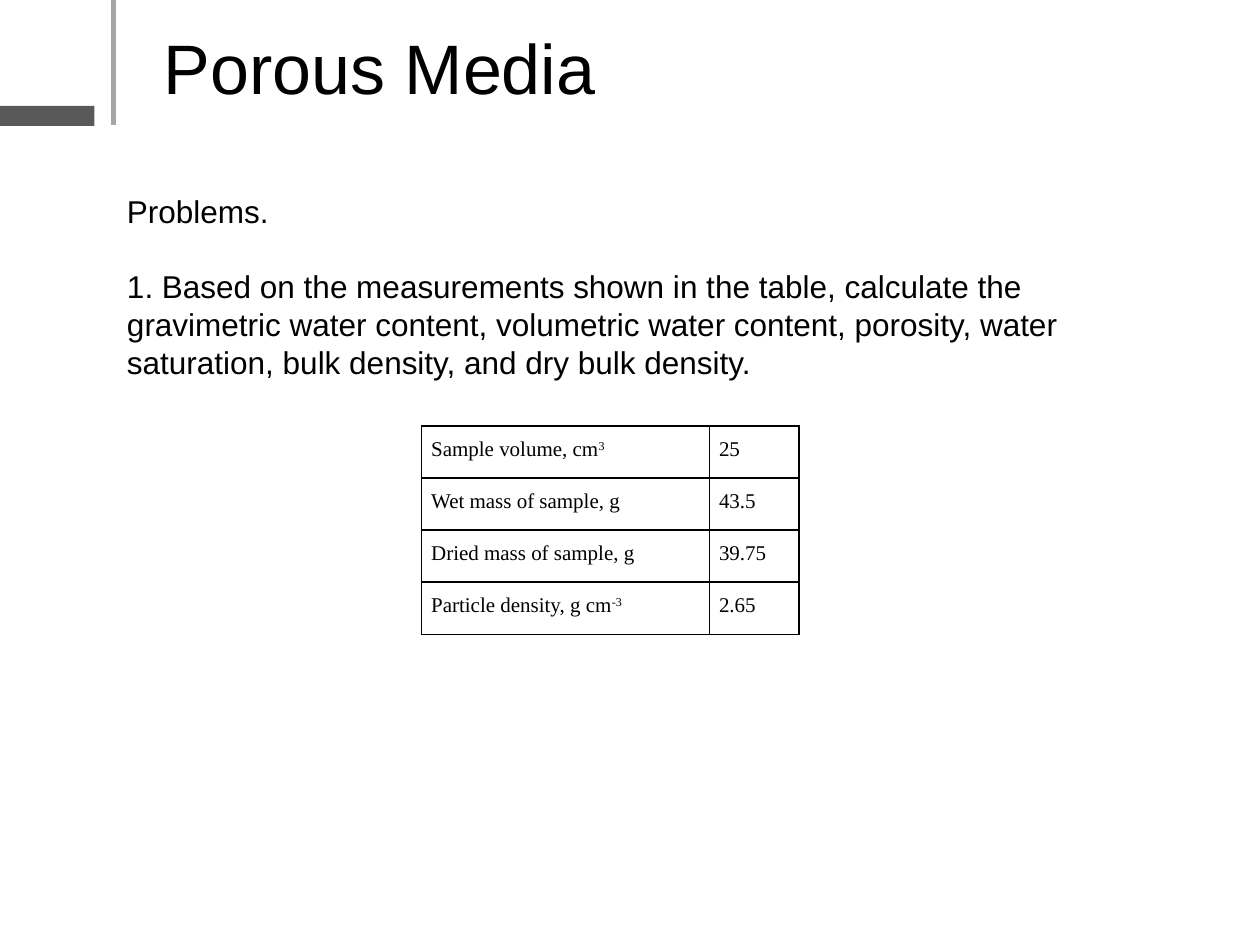
from lxml import etree
from pptx import Presentation
from pptx.dml.color import RGBColor
from pptx.enum import shapes, text
from pptx.oxml import parse_xml
from pptx.oxml.ns import nsdecls, qn
from pptx.util import Pt


def color(hex_value):
    return RGBColor.from_string(hex_value)


def add_run(paragraph, words, size, font, baseline=None):
    run = paragraph.add_run()
    run.text = words
    run.font.size = Pt(size)
    run.font.name = font
    run.font.color.rgb = color("000000")
    if baseline:
        run.font._element.set("baseline", str(baseline))


prs = Presentation()
prs.slide_width, prs.slide_height = Pt(720), Pt(540)
slide = prs.slides.add_slide(prs.slide_layouts[5])

# Corner decoration
corner_bar = slide.shapes.add_shape(
    shapes.MSO_SHAPE.RECTANGLE, Pt(0), Pt(60.5), Pt(54), Pt(11.5))
corner_bar.shadow.inherit = False
corner_bar.fill.solid()
corner_bar.fill.fore_color.rgb = color("595959")
corner_bar.line.fill.background()

corner_rule = slide.shapes.add_connector(
    shapes.MSO_CONNECTOR.STRAIGHT, Pt(65), Pt(0), Pt(65), Pt(71.5))
corner_rule.line.color.rgb = color("A6A6A6")
corner_rule.line.width = Pt(3)
etree.SubElement(corner_rule._element.spPr, qn("a:effectLst"))

# Title
heading = slide.shapes.title
heading.left, heading.top, heading.width, heading.height = (
    Pt(86.4), Pt(10.5), Pt(275), Pt(55.5))
heading.text_frame.auto_size = text.MSO_AUTO_SIZE.NONE
heading.text_frame.vertical_anchor = text.MSO_ANCHOR.TOP
heading_line = heading.text_frame.paragraphs[0]
heading_line.alignment = text.PP_ALIGN.LEFT
heading_line.line_spacing = Pt(48)
add_run(heading_line, "Porous Media", 40, "Arial")

# Problem statement
problem = slide.shapes.add_textbox(Pt(65.5), Pt(106), Pt(584), Pt(138)).text_frame
problem.word_wrap = True
intro = problem.paragraphs[0]
question = problem.add_paragraph()
question.space_before = Pt(21.6)
statements = [
    (intro, "Problems."),
    (question, "1. Based on the measurements shown in the table, calculate the "
               "gravimetric water content, volumetric water content, porosity, "
               "water saturation, bulk density, and dry bulk density."),
]
for paragraph, words in statements:
    paragraph.line_spacing = Pt(21.6)
    add_run(paragraph, words, 18, "Arial")

# Measurements: quantity, exponent of its unit, value
measurements = [
    ("Sample volume, cm", "3", "25"),
    ("Wet mass of sample, g", "", "43.5"),
    ("Dried mass of sample, g", "", "39.75"),
    ("Particle density, g cm", "-3", "2.65"),
]
row_height = 29.75
table = slide.shapes.add_table(
    len(measurements), 2, Pt(241), Pt(243.5), Pt(215.5),
    Pt(row_height * len(measurements))).table
table.first_row = table.horz_banding = False
table.columns[0].width, table.columns[1].width = Pt(164.5), Pt(51)

for row, (quantity, exponent, value) in enumerate(measurements):
    table.rows[row].height = Pt(row_height)
    for column, words in enumerate((quantity, value)):
        cell = table.cell(row, column)
        cell.margin_left = cell.margin_right = Pt(5.4)
        cell.margin_top = cell.margin_bottom = Pt(0)
        paragraph = cell.text_frame.paragraphs[0]
        paragraph.line_spacing = 1.5
        add_run(paragraph, words, 12, "Times New Roman")
        if column == 0 and exponent:
            add_run(paragraph, exponent, 12, "Times New Roman", 30000)
        # Borders come before the fill in the cell properties
        properties = cell._tc.get_or_add_tcPr()
        for side in ("lnL", "lnR", "lnT", "lnB"):
            properties.append(parse_xml(
                f'<a:{side} {nsdecls("a")} w="{Pt(1)}"><a:solidFill>'
                f'<a:srgbClr val="000000"/></a:solidFill></a:{side}>'))
        cell.fill.background()

prs.save("out.pptx")
